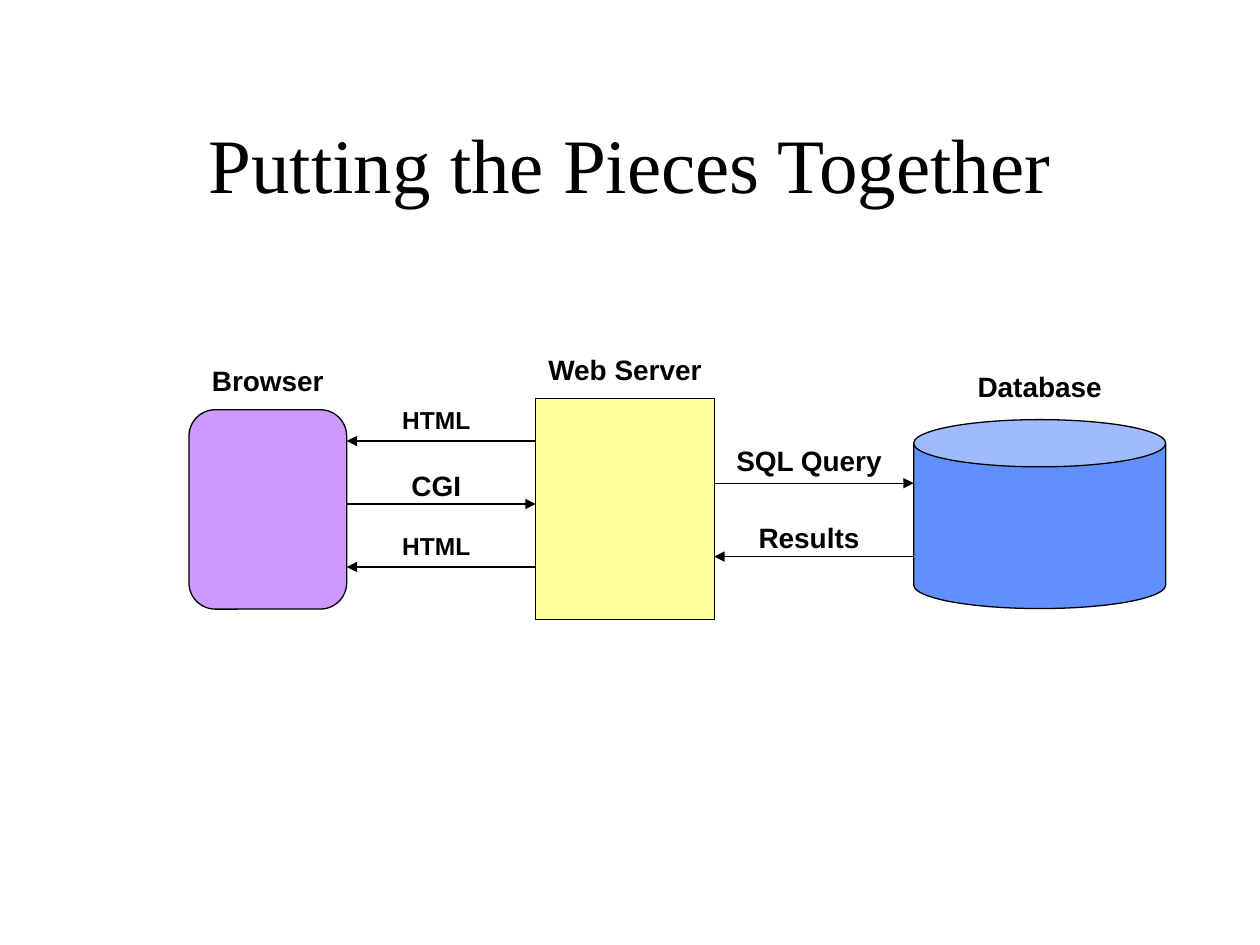
from pptx import Presentation
from pptx import util as u
from pptx.dml import color
from pptx.enum import shapes, text
from pptx.oxml.ns import qn
from lxml import etree

INK = "000000"
TITLE = "Putting the Pieces Together"

# name: shape, box in cm (left, top, width, height), fill, corner or rim, label rise
NODES = {
    "Browser": ("ROUNDED_RECTANGLE", (3.81, 8.26, 3.18, 4.02), "CC99FF", 0.167, 1.08),
    "Web Server": ("RECTANGLE", (10.8, 8.04, 3.6, 4.45), "FFFF99", None, 1.08),
    "Database": ("CAN", (18.42, 8.46, 5.08, 3.81), "618FFD", 0.25, 1.16),
}

# label, size, from, to, height on slide in cm, label rise
FLOWS = [
    ("HTML", 14, "Web Server", "Browser", 8.89, 0.84),
    ("CGI", 16, "Browser", "Web Server", 10.16, 0.86),
    ("HTML", 14, "Web Server", "Browser", 11.43, 0.84),
    ("SQL Query", 16, "Web Server", "Database", 9.74, 0.95),
    ("Results", 16, "Database", "Web Server", 11.22, 0.87),
]


def rgb(code):
    return color.RGBColor.from_string(code)


def write(pool, words, box, size, font="Arial", bold=True):
    frame = pool.add_textbox(*map(u.Cm, box)).text_frame
    frame.word_wrap = True
    frame.margin_left = frame.margin_right = 0
    frame.vertical_anchor = text.MSO_ANCHOR.MIDDLE
    para = frame.paragraphs[0]
    para.alignment = text.PP_ALIGN.CENTER
    run = para.add_run()
    run.text = words
    run.font.size = u.Pt(size)
    run.font.name = font
    run.font.bold = bold
    run.font.color.rgb = rgb(INK)


def label(pool, words, mid, top, size=16):
    """Centre a short label on mid, with its box starting at top."""
    wide, high = 3.6, size * 0.06
    write(pool, words, (mid - wide / 2, top, wide, high), size)


def edge(item):
    item.line.color.rgb = rgb(INK)
    item.line.width = u.Pt(0.75)


def node(pool, name, kind, box, fill, bend, rise):
    item = pool.add_shape(shapes.MSO_SHAPE[kind], *map(u.Cm, box))
    item.shadow.inherit = False
    item.fill.solid()
    item.fill.fore_color.rgb = rgb(fill)
    edge(item)
    if bend is not None:
        item.adjustments[0] = bend
    left, top, wide, _ = box
    label(pool, name, left + wide / 2, top - rise)


def flow(pool, words, size, start, end, y, rise):
    # Join the facing sides of the two nodes
    a, b = NODES[start][1], NODES[end][1]
    if a[0] < b[0]:
        x1, x2 = a[0] + a[2], b[0]
    else:
        x1, x2 = a[0], b[0] + b[2]
    line = pool.add_connector(
        shapes.MSO_CONNECTOR.STRAIGHT, *map(u.Cm, (x1, y, x2, y)))
    edge(line)
    # Arrowhead at the far end, and no shadow
    props = line._element.spPr
    etree.SubElement(props.find(qn("a:ln")), qn("a:tailEnd"), type="triangle")
    etree.SubElement(props, qn("a:effectLst"))
    label(pool, words, (x1 + x2) / 2 - 0.1, y - rise, size)


def main():
    deck = Presentation()
    deck.slide_width, deck.slide_height = u.Cm(25.4), u.Cm(19.05)
    pool = deck.slides.add_slide(deck.slide_layouts[6]).shapes

    # Title
    write(pool, TITLE, (1.9, 1.7, 21.6, 3.18), 44, "Times New Roman", False)

    # Nodes, then the traffic between them
    for name, row in NODES.items():
        node(pool, name, *row)
    for row in FLOWS:
        flow(pool, *row)

    deck.save("out.pptx")


if __name__ == "__main__":
    main()
